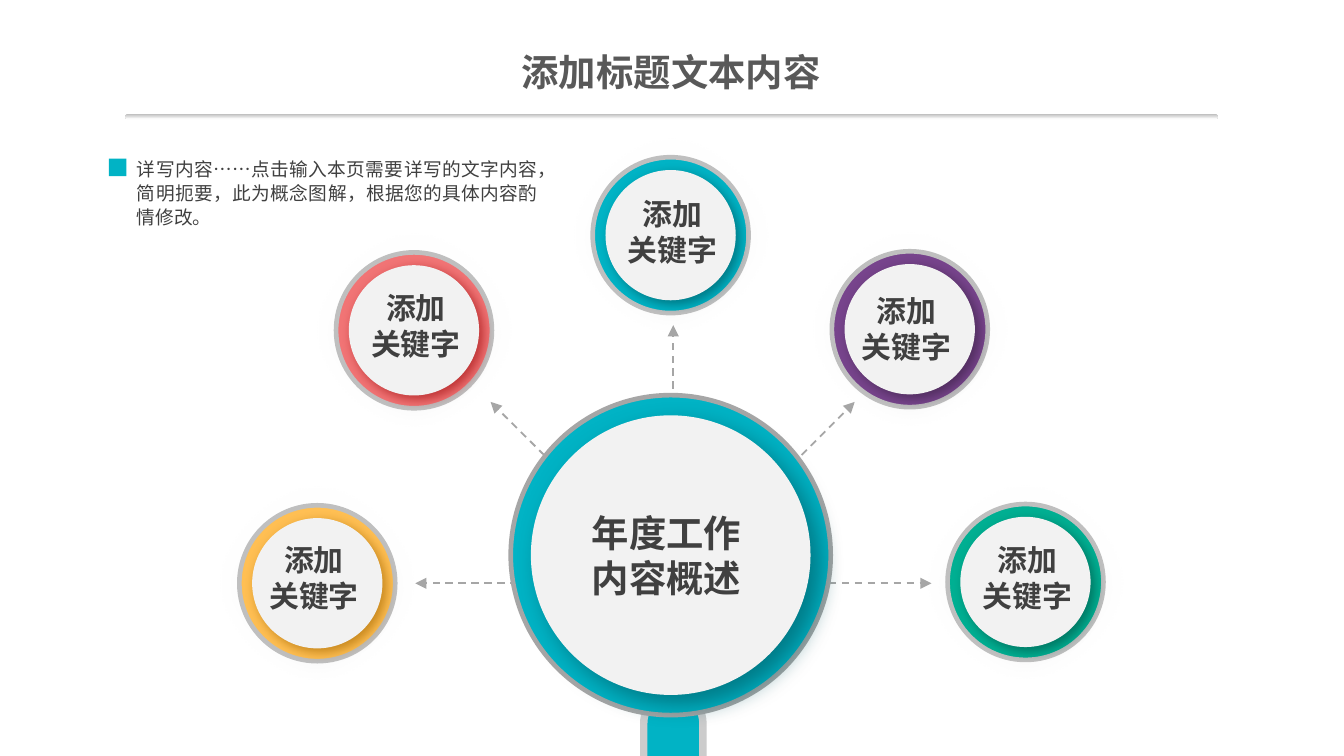
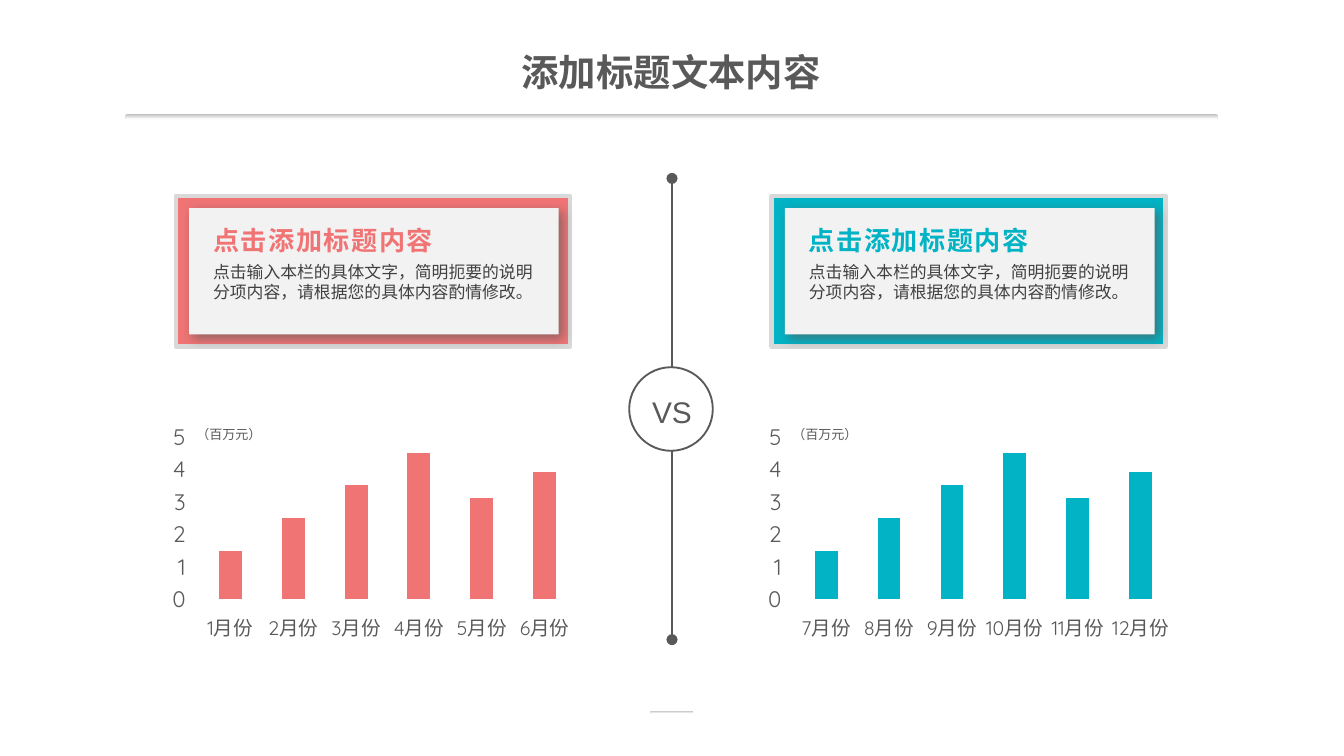
from lxml.etree import SubElement
from pptx import Presentation
from pptx.chart.data import CategoryChartData
from pptx.dml.color import RGBColor
from pptx.enum.chart import XL_CHART_TYPE, XL_TICK_MARK
from pptx.enum.dml import MSO_LINE
from pptx.enum.shapes import MSO_CONNECTOR, MSO_SHAPE
from pptx.enum.text import MSO_AUTO_SIZE, PP_ALIGN
from pptx.oxml.ns import qn
from pptx.util import Pt

WHITE = RGBColor(0xFF, 0xFF, 0xFF)
PANEL = RGBColor(0xF2, 0xF2, 0xF2)
CARD_RIM = RGBColor(0xD9, 0xD9, 0xD9)
STEM_RIM = RGBColor(0xCC, 0xCC, 0xCC)
SILVER = RGBColor(0xBF, 0xBF, 0xBF)
ARROW = RGBColor(0xA6, 0xA6, 0xA6)
GRAY = RGBColor(0x59, 0x59, 0x59)
INK = RGBColor(0x40, 0x40, 0x40)
TEAL = RGBColor(0x01, 0xB3, 0xC5)
TEAL_SHADE = RGBColor(0x00, 0x59, 0x62)
CORAL = RGBColor(0xF1, 0x74, 0x75)
CORAL_SHADE = RGBColor(0xA2, 0x10, 0x11)
AMBER = RGBColor(0xFF, 0xBF, 0x53)
AMBER_SHADE = RGBColor(0xA9, 0x6A, 0x00)
PURPLE = RGBColor(0x77, 0x44, 0x8C)
PURPLE_SHADE = RGBColor(0x3C, 0x22, 0x46)
GREEN = RGBColor(0x00, 0xAF, 0x92)
GREEN_SHADE = RGBColor(0x00, 0x58, 0x49)

CJK_FONT = "Noto Sans CJK SC"
LATIN_FONT = "Arial"
AXIS_FONT = "Quicksand"
NARROW_INSETS = (5, 2.5)
KEYWORD_INSETS = (8.6, 4.3)

SATELLITES = [
    (170, 312.5, AMBER, AMBER_SHADE, -1.8, -26.6),
    (221.8, 177, CORAL, CORAL_SHADE, 1, -26),
    (359.3, 126, TEAL, TEAL_SHADE, 1, -25.2),
    (487.4, 176.4, PURPLE, PURPLE_SHADE, -1.8, -23.8),
    (549.4, 311.8, GREEN, GREEN_SHADE, 1, -26),
]
ARROW_TIPS = [(222.5, 312.5), (499, 312.5), (360.7, 174.2), (262.8, 215.3), (457.9, 215.3)]


def add_figure(slide, kind, box, fill=None, rim=None, rim_width=2.5):
    """Add a preset shape without shadow, with optional fill and outline."""
    shape = slide.shapes.add_shape(kind, *(Pt(length) for length in box))
    shape.shadow.inherit = False
    if fill is None:
        shape.fill.background()
    else:
        shape.fill.solid()
        shape.fill.fore_color.rgb = fill
    if rim is None:
        shape.line.fill.background()
    else:
        shape.line.color.rgb = rim
        shape.line.width = Pt(rim_width)
    return shape


def centred_box(center_x, center_y, size):
    """Return the square box of a given size around a center."""
    return center_x - size / 2, center_y - size / 2, size, size


def fade(shape, first, second):
    """Fill a shape with a gradient from top to bottom."""
    shape.fill.gradient()
    shape.fill.gradient_angle = 270
    for stop, colour in zip(shape.fill.gradient_stops, (first, second)):
        stop.color.rgb = colour


def cast_shadow(shape, colour, blur, distance):
    """Give a shape a soft shadow towards the lower right."""
    effects = shape._element.spPr.find(qn("a:effectLst"))
    shadow = SubElement(effects, qn("a:outerShdw"), blurRad=str(Pt(blur)),
                        dist=str(Pt(distance)), dir="2700000", algn="tl", rotWithShape="0")
    tone = SubElement(shadow, qn("a:srgbClr"), val=str(colour))
    SubElement(tone, qn("a:alpha"), val="64000")


def add_text(slide, box, lines, size, colour, font=CJK_FONT, bold=False, align=PP_ALIGN.LEFT,
             insets=(7.2, 3.6), wrap=True, leading=None, tracking=None):
    """Add a text box with one paragraph per line, all in one style."""
    shape = slide.shapes.add_textbox(*(Pt(length) for length in box))
    frame = shape.text_frame
    frame.word_wrap = wrap
    frame.auto_size = MSO_AUTO_SIZE.SHAPE_TO_FIT_TEXT
    frame.margin_left = frame.margin_right = Pt(insets[0])
    frame.margin_top = frame.margin_bottom = Pt(insets[1])
    frame.text = "\n".join(lines)
    for paragraph in frame.paragraphs:
        paragraph.alignment = align
        if leading:
            paragraph.line_spacing = Pt(leading)
        paragraph.font.size = Pt(size)
        paragraph.font.bold = bold
        paragraph.font.name = font
        paragraph.font.color.rgb = colour
        properties = paragraph.font._rPr
        SubElement(properties, qn("a:ea"), typeface=CJK_FONT)
        if tracking:
            properties.set("spc", str(int(tracking * 100)))


def add_line(slide, start, end, colour, tip, dash=None):
    """Draw a thin straight connector with a tip at its end."""
    connector = slide.shapes.add_connector(
        MSO_CONNECTOR.STRAIGHT, *(Pt(length) for length in (*start, *end)))
    connector.line.color.rgb = colour
    connector.line.width = Pt(1)
    if dash:
        connector.line.dash_style = dash
    properties = connector._element.spPr
    SubElement(properties.find(qn("a:ln")), qn("a:tailEnd"), type=tip)
    SubElement(properties, qn("a:effectLst"))


def add_rule(slide, box):
    """Draw a rounded gray bar that fades to white."""
    bar = add_figure(slide, MSO_SHAPE.ROUNDED_RECTANGLE, box, SILVER)
    bar.adjustments[0] = 0.5
    fade(bar, SILVER, WHITE)


def add_header(slide):
    """Place the slide title and the rule below it."""
    add_rule(slide, (67, 61.2, 585.4, 2.6))
    add_text(slide, (221, 23.8, 277.2, 29.5), ["添加标题文本内容"], 20, GRAY, LATIN_FONT,
             bold=True, align=PP_ALIGN.CENTER, insets=NARROW_INSETS)


def add_disc(slide, center, outer, inner, colour, rim, shade, blur, distance):
    """Draw a coloured ring around a pale raised disc."""
    add_figure(slide, MSO_SHAPE.OVAL, centred_box(*center, outer), colour, rim)
    disc = add_figure(slide, MSO_SHAPE.OVAL, centred_box(*center, inner), PANEL)
    cast_shadow(disc, shade, blur, distance)


def add_halo(slide, center):
    """Draw the faint soft glow behind a satellite."""
    halo = add_figure(slide, MSO_SHAPE.OVAL, centred_box(*center, 115.2), SILVER)
    fade(halo, WHITE, SILVER)
    for tone in halo._element.spPr.iter(qn("a:srgbClr")):
        SubElement(tone, qn("a:alpha"), val="30000")
    SubElement(halo._element.spPr.find(qn("a:effectLst")), qn("a:softEdge"), rad=str(Pt(16)))


def add_satellite(slide, center_x, center_y, colour, shade, label_shift, label_rise):
    """Draw one keyword circle around its center."""
    center = center_x, center_y
    add_halo(slide, center)
    add_disc(slide, center, 83.5, 69.8, colour, SILVER, shade, 6, 3)
    add_text(slide, (center_x - 35 + label_shift, center_y + label_rise, 70, 47.5),
             ["添加", "关键字"], 16, INK, bold=True, align=PP_ALIGN.CENTER, insets=KEYWORD_INSETS)


def add_hub(slide, center_x, center_y):
    """Draw the large central circle with its heading."""
    add_disc(slide, (center_x, center_y), 171.4, 149.8, TEAL, ARROW, TEAL_SHADE, 13, 7)
    add_text(slide, (center_x - 66.3, center_y - 27.4, 128.2, 55.4), ["年度工作", "内容概述"],
             20, INK, bold=True, align=PP_ALIGN.CENTER)


def add_remark(slide, left, top):
    """Place the square marker and the explanation beside it."""
    add_text(slide, (left + 15, top, 214.6, 39.6),
             ["详写内容……点击输入本页需要详写的文字内容，简明扼要，此为概念图解，根据您的具体内容酌情修改。"],
             10, INK, align=PP_ALIGN.JUSTIFY, insets=(0, 0), leading=13)
    add_figure(slide, MSO_SHAPE.RECTANGLE, (left, top + 1.5, 9.4, 9.4), TEAL)


def build_overview(slide):
    """Build the slide with the hub and its five keywords."""
    stem = add_figure(slide, MSO_SHAPE.ROUNDED_RECTANGLE, (320.4, 396, 80.6, 31.7),
                      TEAL, STEM_RIM, 4)
    stem.adjustments[0] = 0.5
    stem.rotation = 90
    add_header(slide)
    for satellite in SATELLITES:
        add_satellite(slide, *satellite)
    for tip in ARROW_TIPS:
        add_line(slide, (360.7, 312.5), tip, ARROW, "triangle", MSO_LINE.DASH)
    add_hub(slide, 359.3, 297.4)
    add_remark(slide, 58.4, 83.5)


def add_divider(slide, center_x, top, bottom):
    """Draw the vertical divider with the VS circle in its middle."""
    center_y, radius = (top + bottom) / 2, 22.4
    add_figure(slide, MSO_SHAPE.OVAL, centred_box(center_x - 0.5, center_y, 2 * radius),
               rim=GRAY, rim_width=1)
    for end, direction in ((top, -1), (bottom, 1)):
        add_line(slide, (center_x, center_y + direction * radius), (center_x, end), GRAY, "oval")
    add_text(slide, (center_x - 18, center_y - 11.8, 36, 26.6), ["VS"], 16, GRAY, LATIN_FONT,
             align=PP_ALIGN.CENTER, wrap=False)


def add_card(slide, left, top, colour):
    """Draw a framed card with its heading and description."""
    frame = add_figure(slide, MSO_SHAPE.ROUNDED_RECTANGLE, (left, top, 211, 80.6),
                       colour, CARD_RIM)
    inside = add_figure(slide, MSO_SHAPE.ROUNDED_RECTANGLE, (left + 7, top + 6.5, 198, 67.7), PANEL)
    for shape in (frame, inside):
        shape.adjustments[0] = 0
    cast_shadow(inside, GRAY, 6, 3)
    add_text(slide, (left + 12.8, top + 31.7, 187.2, 28.8),
             ["点击输入本栏的具体文字，简明扼要的说明分项内容，请根据您的具体内容酌情修改。"], 9, INK)
    add_text(slide, (left + 12.8, top + 11.5, 139, 24.5), ["点击添加标题内容"], 14, colour,
             LATIN_FONT, bold=True, tracking=0.8)


def add_monthly_chart(slide, left, top, first_month, colour):
    """Add a half-year column chart with its unit label."""
    data = CategoryChartData()
    data.categories = [f"{month}月份" for month in range(first_month, first_month + 6)]
    data.add_series("Series 1", (1.5, 2.5, 3.5, 4.5, 3.1, 3.9))
    chart = slide.shapes.add_chart(XL_CHART_TYPE.COLUMN_CLUSTERED, Pt(left), Pt(top),
                                   Pt(225.4), Pt(121.7), data).chart
    chart.has_legend = chart.has_title = False
    chart.font.size = Pt(10)
    chart.font.name = "DejaVu Sans"
    plot = chart.plots[0]
    plot.vary_by_categories = False
    plot.gap_width, plot.overlap = 175, -27
    series = plot.series[0]
    series.format.fill.solid()
    series.format.fill.fore_color.rgb = colour
    for axis, size in ((chart.category_axis, 10.5), (chart.value_axis, 12)):
        axis.has_major_gridlines = False
        axis.major_tick_mark = XL_TICK_MARK.CROSS
        axis.format.line.fill.background()
        font = axis.tick_labels.font
        font.size = Pt(size)
        font.name = AXIS_FONT
        font.color.rgb = GRAY
    chart.value_axis.minimum_scale = 0
    chart.value_axis.maximum_scale = 5
    chart.value_axis.major_unit = 1
    add_text(slide, (left + 12.5, top + 2.2, 52.6, 13.7), ["（百万元）"], 7, GRAY, LATIN_FONT,
             insets=NARROW_INSETS)


def add_half_year(slide, left, top, first_month, colour):
    """Place one half-year column: a card above its chart."""
    add_monthly_chart(slide, left, top + 119, first_month, colour)
    add_card(slide, left + 6.5, top, colour)


def build_comparison(slide):
    """Build the slide that compares the two half-years."""
    add_header(slide)
    add_rule(slide, (348.5, 380.9, 23, 1.4))
    add_divider(slide, 360, 95.6, 342.7)
    for left, first_month, colour in ((87.8, 1, CORAL), (407, 7, TEAL)):
        add_half_year(slide, left, 105, first_month, colour)


def main():
    """Build both slides and save the presentation."""
    presentation = Presentation()
    presentation.slide_width, presentation.slide_height = Pt(720), Pt(405)
    for build in (build_overview, build_comparison):
        build(presentation.slides.add_slide(presentation.slide_layouts[6]))
    presentation.save("out.pptx")


if __name__ == "__main__":
    main()
